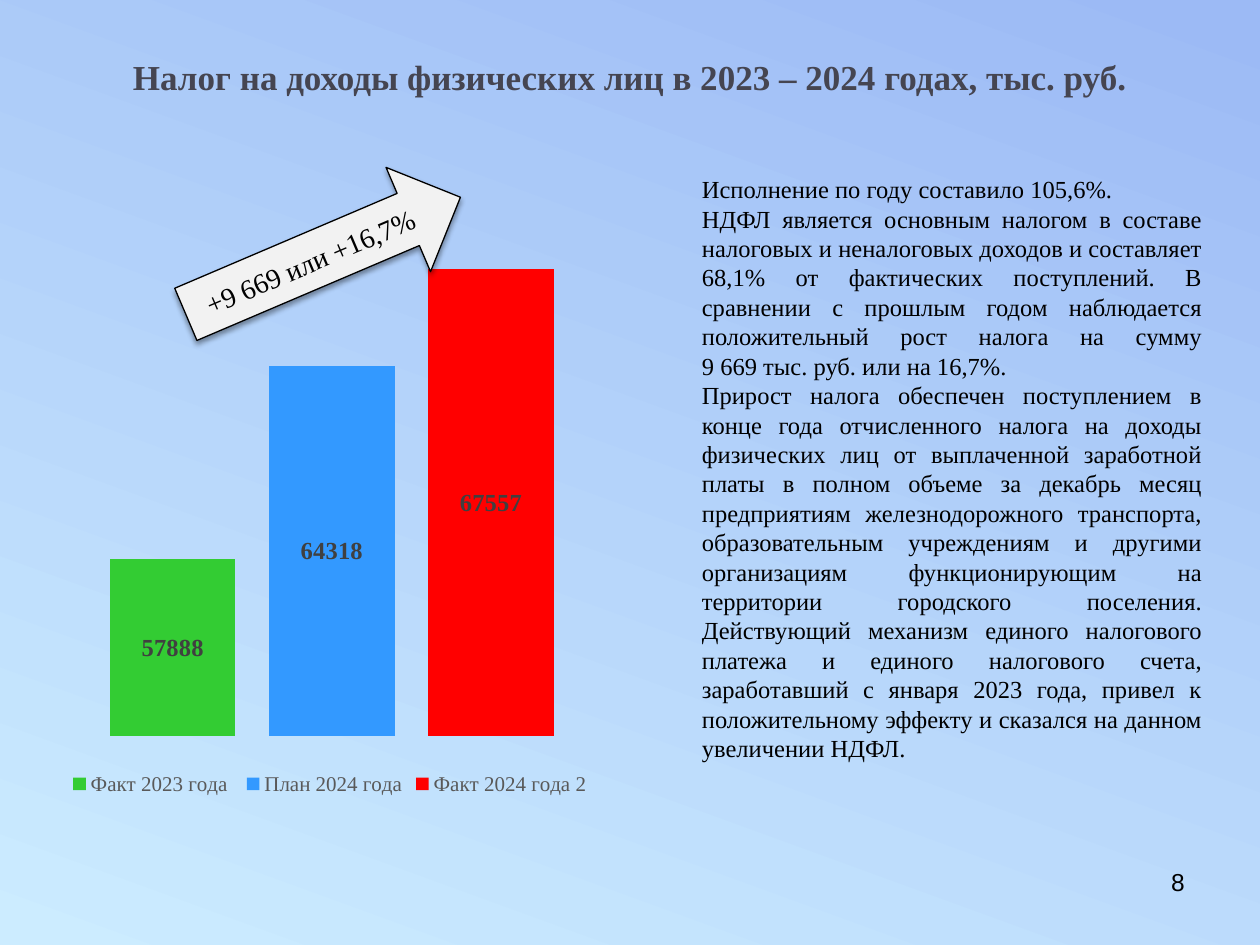
"""Build the slide on personal income tax in 2023 and 2024."""
from pptx import Presentation
from pptx.chart.data import CategoryChartData
from pptx.dml.color import RGBColor
from pptx.enum.chart import XL_CHART_TYPE, XL_LABEL_POSITION, XL_LEGEND_POSITION
from pptx.enum.shapes import MSO_SHAPE
from pptx.enum.text import MSO_ANCHOR, PP_ALIGN
from pptx.oxml import parse_xml
from pptx.oxml.ns import nsdecls
from pptx.util import Pt

COLUMNS = XL_CHART_TYPE.COLUMN_CLUSTERED
LABEL_CENTER = XL_LABEL_POSITION.CENTER
LEGEND_BOTTOM = XL_LEGEND_POSITION.BOTTOM
RIGHT_ARROW = MSO_SHAPE.RIGHT_ARROW
MIDDLE = MSO_ANCHOR.MIDDLE
LEFT, CENTER, RIGHT, JUSTIFY = (
    PP_ALIGN.LEFT, PP_ALIGN.CENTER, PP_ALIGN.RIGHT, PP_ALIGN.JUSTIFY)
SERIF = "Times New Roman"

COLORS = {
    "sky": "CCECFF", "periwinkle": "9CBAF5", "title": "454551", "black": "000000",
    "label": "404040", "legend": "595959", "arrow": "F2F2F2",
    "green": "33CC33", "blue": "3399FF", "red": "FF0000",
}
SERIES = [
    ("Факт 2023 года ", 57888, "green"),
    ("План 2024 года", 64318, "blue"),
    ("Факт 2024 года 2", 67557, "red"),
]
COMMENTARY = [
    "Исполнение по году составило 105,6%.",
    "НДФЛ является основным налогом в составе налоговых и неналоговых доходов и "
    "составляет 68,1% от фактических поступлений. В сравнении с прошлым годом "
    "наблюдается положительный рост налога на сумму\v9 669 тыс. руб. или на 16,7%.",
    "Прирост налога обеспечен поступлением в конце года отчисленного налога на доходы "
    "физических лиц от выплаченной заработной платы в полном объеме за декабрь месяц "
    "предприятиям железнодорожного транспорта, образовательным учреждениям и другими "
    "организациям функционирующим на территории городского поселения. Действующий "
    "механизм единого налогового платежа и единого налогового счета, заработавший с "
    "января 2023 года, привел к положительному эффекту и сказался на данном "
    "увеличении НДФЛ.",
]


def style_font(font, size, color="black", name=SERIF, bold=False):
    font.size, font.name, font.bold = Pt(size), name, bold
    font.color.rgb = RGBColor.from_string(COLORS[color])


def write(frame, text, align=LEFT, **style):
    frame.word_wrap = True
    frame.text = text
    for para in frame.paragraphs:
        para.alignment = align
        for span in para.runs:
            style_font(span.font, **style)


deck = Presentation()
deck.slide_width, deck.slide_height = Pt(720), Pt(540)
page = deck.slides.add_slide(deck.slide_layouts[5])

backdrop = page.background.fill
backdrop.gradient()
backdrop.gradient_angle = 70
for stop, position, color in zip(
        backdrop.gradient_stops, (0, 0.99), ("sky", "periwinkle")):
    stop.position = position
    stop.color.rgb = RGBColor.from_string(COLORS[color])

title = page.shapes.title
title.left, title.top, title.width, title.height = Pt(36), Pt(21.6), Pt(648), Pt(44)
title.text_frame.vertical_anchor = MIDDLE
write(title.text_frame, "Налог на доходы физических лиц в 2023 – 2024 годах, тыс. руб.",
      align=CENTER, size=20, color="title", bold=True)

chart_data = CategoryChartData()
chart_data.categories = ["1"]
for name, value, color in SERIES:
    chart_data.add_series(name, [value])
chart = page.shapes.add_chart(
    COLUMNS, Pt(15), Pt(100.8), Pt(347), Pt(356.4), chart_data).chart
style_font(chart.font, 10, name="Arial")
chart.has_title = False
chart.has_legend = True
chart.legend.position = LEGEND_BOTTOM
chart.legend.include_in_layout = False
style_font(chart.legend.font, 12, "legend")
chart.category_axis.visible = False
chart.value_axis.visible = False
chart.value_axis.has_major_gridlines = False
chart.value_axis.minimum_scale = 52000
chart.value_axis.maximum_scale = 70000

plot = chart.plots[0]
plot.gap_width, plot.overlap, plot.vary_by_categories = 100, -27, False
for series, (name, value, color) in zip(plot.series, SERIES):
    series.format.fill.solid()
    series.format.fill.fore_color.rgb = RGBColor.from_string(COLORS[color])
    labels = series.data_labels
    labels.show_value = True
    labels.position = LABEL_CENTER
    style_font(labels.font, 14, "label", bold=True)

plot_area = chart.element.xpath("c:chart/c:plotArea")[0]
for layout in plot_area.xpath("c:layout"):
    plot_area.remove(layout)
plot_area.insert(0, parse_xml(
    f'<c:layout {nsdecls("c")}><c:manualLayout><c:layoutTarget val="inner"/>'
    '<c:xMode val="edge"/><c:yMode val="edge"/><c:x val="0.035"/><c:y val="0.031"/>'
    '<c:w val="0.937"/><c:h val="0.867"/></c:manualLayout></c:layout>'))

number_box = page.shapes.add_textbox(Pt(516), Pt(492), Pt(168), Pt(37.5))
write(number_box.text_frame, "8", align=RIGHT, size=14, name="Arial")

comment_box = page.shapes.add_textbox(Pt(394), Pt(96), Pt(300), Pt(380))
write(comment_box.text_frame, "\n".join(COMMENTARY), align=JUSTIFY, size=14)

arrow = page.shapes.add_shape(RIGHT_ARROW, Pt(99.4), Pt(113.8), Pt(170.6), Pt(64.8))
arrow.rotation = 336.9
arrow.fill.solid()
arrow.fill.fore_color.rgb = RGBColor.from_string(COLORS["arrow"])
arrow.line.color.rgb = RGBColor.from_string(COLORS["black"])
arrow.line.width = Pt(0.75)
arrow.text_frame.vertical_anchor = MIDDLE
write(arrow.text_frame, "+9 669 или +16,7%", align=CENTER, size=16)
arrow.shadow.inherit = False
effects = arrow.element.xpath("p:spPr/a:effectLst")[0]
effects.append(parse_xml(
    f'<a:outerShdw {nsdecls("a")} blurRad="{Pt(3.1)}" dist="{Pt(1.6)}" dir="5400000" '
    f'rotWithShape="0"><a:srgbClr val="{COLORS["black"]}"><a:alpha val="38000"/>'
    '</a:srgbClr></a:outerShdw>'))

deck.save("out.pptx")
